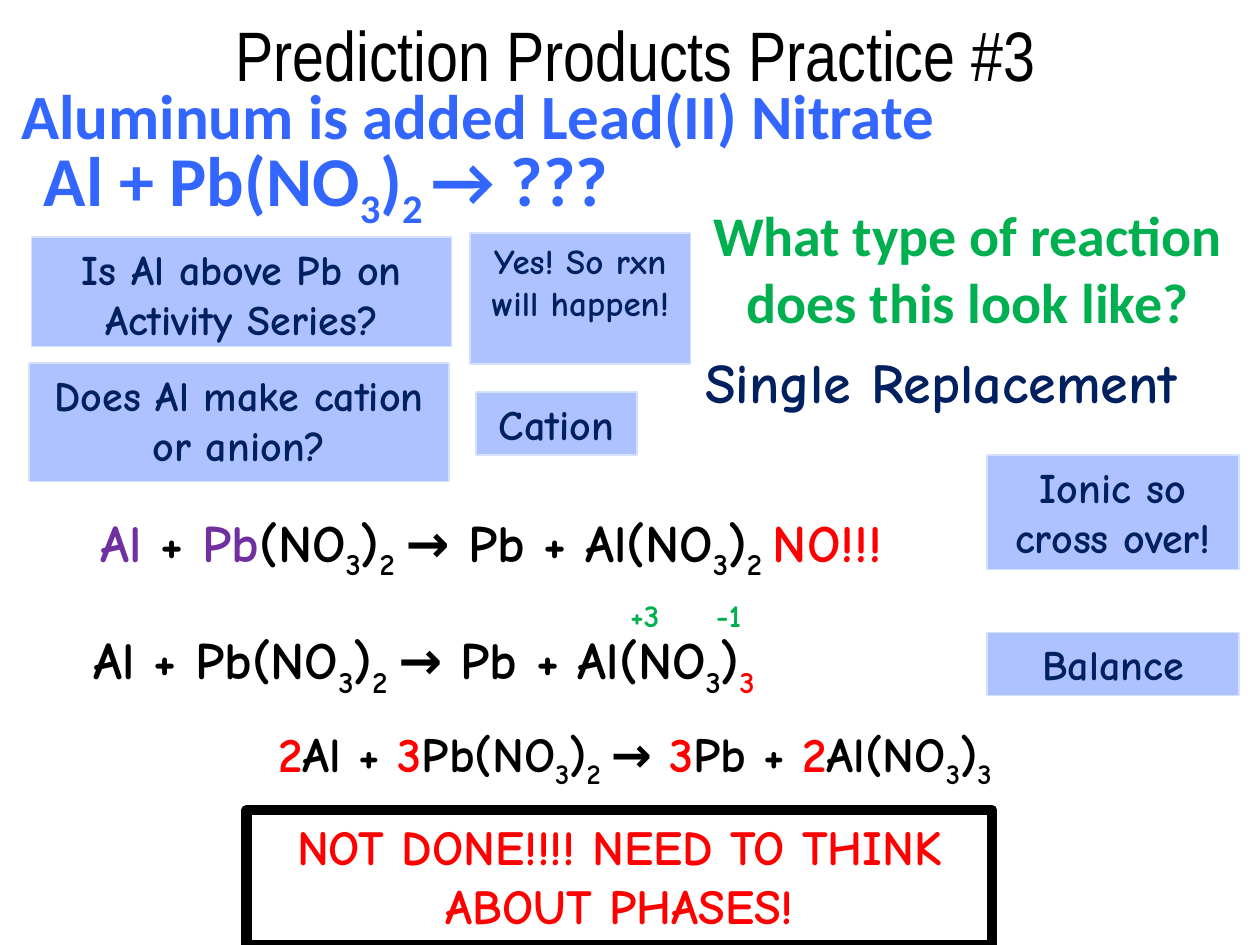
from lxml import etree
from pptx import Presentation
from pptx import util as u
from pptx.dml.color import RGBColor
from pptx.enum import shapes, text
from pptx.oxml.ns import qn

BLACK = RGBColor(0x00, 0x00, 0x00)
WHITE = RGBColor(0xFF, 0xFF, 0xFF)
BLUE = RGBColor(0x33, 0x66, 0xFF)
GREEN = RGBColor(0x00, 0xB0, 0x50)
NAVY = RGBColor(0x00, 0x20, 0x60)
PURPLE = RGBColor(0x70, 0x30, 0xA0)
RED = RGBColor(0xFF, 0x00, 0x00)
CARD_FILL = RGBColor(0xAD, 0xC2, 0xFF)
CARD_EDGE = RGBColor(0xD6, 0xE0, 0xFF)

CENTER = text.PP_ALIGN.CENTER
LEFT = text.PP_ALIGN.LEFT


def write(frame, parts, size, font="Comic Neue", bold=True, align=CENTER):
    """Write (wording, colour) parts; text between underscores is subscript."""
    frame.word_wrap = True
    paragraph = frame.paragraphs[0]
    paragraph.alignment = align
    font_format = {"name": font, "size": u.Pt(size), "bold": bold}
    for wording, colour in parts:
        for i, piece in enumerate(wording.split("_")):
            if not piece:
                continue
            run = paragraph.add_run()
            run.text = piece
            for key, value in font_format.items():
                setattr(run.font, key, value)
            run.font.color.rgb = colour
            if i % 2:
                run._r.get_or_add_rPr().set("baseline", "-25000")
    return paragraph


def add_text(slide, box, parts, size, **style):
    frame = slide.shapes.add_textbox(*map(u.Pt, box)).text_frame
    frame.auto_size = text.MSO_AUTO_SIZE.SHAPE_TO_FIT_TEXT
    return write(frame, parts, size, **style)


def add_card(slide, box, wording, size=24, colour=NAVY,
             fill=CARD_FILL, edge=CARD_EDGE, edge_width=0.75):
    card = slide.shapes.add_shape(shapes.MSO_SHAPE.RECTANGLE, *map(u.Pt, box))
    card.shadow.inherit = False
    card.fill.solid()
    card.fill.fore_color.rgb = fill
    card.line.color.rgb = edge
    card.line.width = u.Pt(edge_width)
    card.text_frame.vertical_anchor = text.MSO_ANCHOR.TOP
    write(card.text_frame, [(wording, colour)], size)


def add_tab_stop(paragraph, position):
    tabs = etree.SubElement(paragraph._p.get_or_add_pPr(), qn("a:tabLst"))
    etree.SubElement(tabs, qn("a:tab"), pos=str(u.Pt(position)), algn="l")


def add_heading(slide):
    add_text(slide, (18, 2.9, 690, 63), [("Prediction Products Practice #3", BLACK)],
             40, font="Arial Narrow", bold=False)
    add_text(slide, (5, 40.3, 654, 51), [("Aluminum is added Lead(II) Nitrate", BLUE)],
             36, font="Calibri", align=LEFT)
    add_text(slide, (18, 74.2, 672, 55.4), [("Al + Pb(NO_3_)_2 _→ ???", BLUE)],
             40, font="Calibri", align=LEFT)


def add_reaction_type(slide):
    add_text(slide, (378, 111, 350, 85),
             [("What type of reaction does this look like?", GREEN)], 32, font="Calibri")
    add_text(slide, (396, 195, 324, 46), [("Single Replacement", NAVY)], 32, align=LEFT)


def add_equations(slide):
    # First attempt, with the wrong formula
    add_text(slide, (-43.2, 288, 648, 44),
             [("Al", PURPLE), (" + ", BLACK), ("Pb", PURPLE),
              ("(NO_3_)_2 _→ Pb + Al(NO_3_)_2 _", BLACK), ("NO!!!", RED)], 30)
    # Crossed-over charges
    add_text(slide, (-43.2, 355, 577.4, 44),
             [("Al + Pb(NO_3_)_2 _→ Pb + Al(NO_3_)", BLACK), ("_3 _", RED)], 30)
    charges = add_text(slide, (353, 337, 120, 29), [("+3\t-1", GREEN)], 18, align=LEFT)
    add_tab_stop(charges, 49)
    # Balanced equation
    add_text(slide, (2.9, 409.7, 720, 41),
             [("2", RED), ("Al + ", BLACK), ("3", RED), ("Pb(NO_3_)_2 _→ ", BLACK),
              ("3", RED), ("Pb + ", BLACK), ("2", RED), ("Al(NO_3_)_3_", BLACK)], 28)


def add_cards(slide):
    # Questions and answers
    add_card(slide, (18, 135.4, 240, 62.6), "Is Al above Pb on Activity Series?")
    add_card(slide, (268.6, 133.2, 126, 74.9), "Yes! So rxn will happen!", size=20)
    add_card(slide, (16.6, 207.4, 240, 67.7), "Does Al make cation or anion?")
    add_card(slide, (272, 224, 92, 36), "Cation")
    # Steps beside the equations
    add_card(slide, (564, 260, 144, 65.5), "Ionic so cross over!")
    add_card(slide, (564, 361.4, 144, 36), "Balance")
    # Closing reminder
    add_card(slide, (141, 463, 426, 77), "NOT DONE!!!! NEED TO THINK ABOUT PHASES!",
             size=28, colour=RED, fill=WHITE, edge=BLACK, edge_width=6)


def main():
    deck = Presentation()
    deck.slide_width, deck.slide_height = u.Pt(720), u.Pt(540)
    slide = deck.slides.add_slide(deck.slide_layouts[6])
    add_heading(slide)
    add_reaction_type(slide)
    add_equations(slide)
    add_cards(slide)
    deck.save("out.pptx")


if __name__ == "__main__":
    main()
